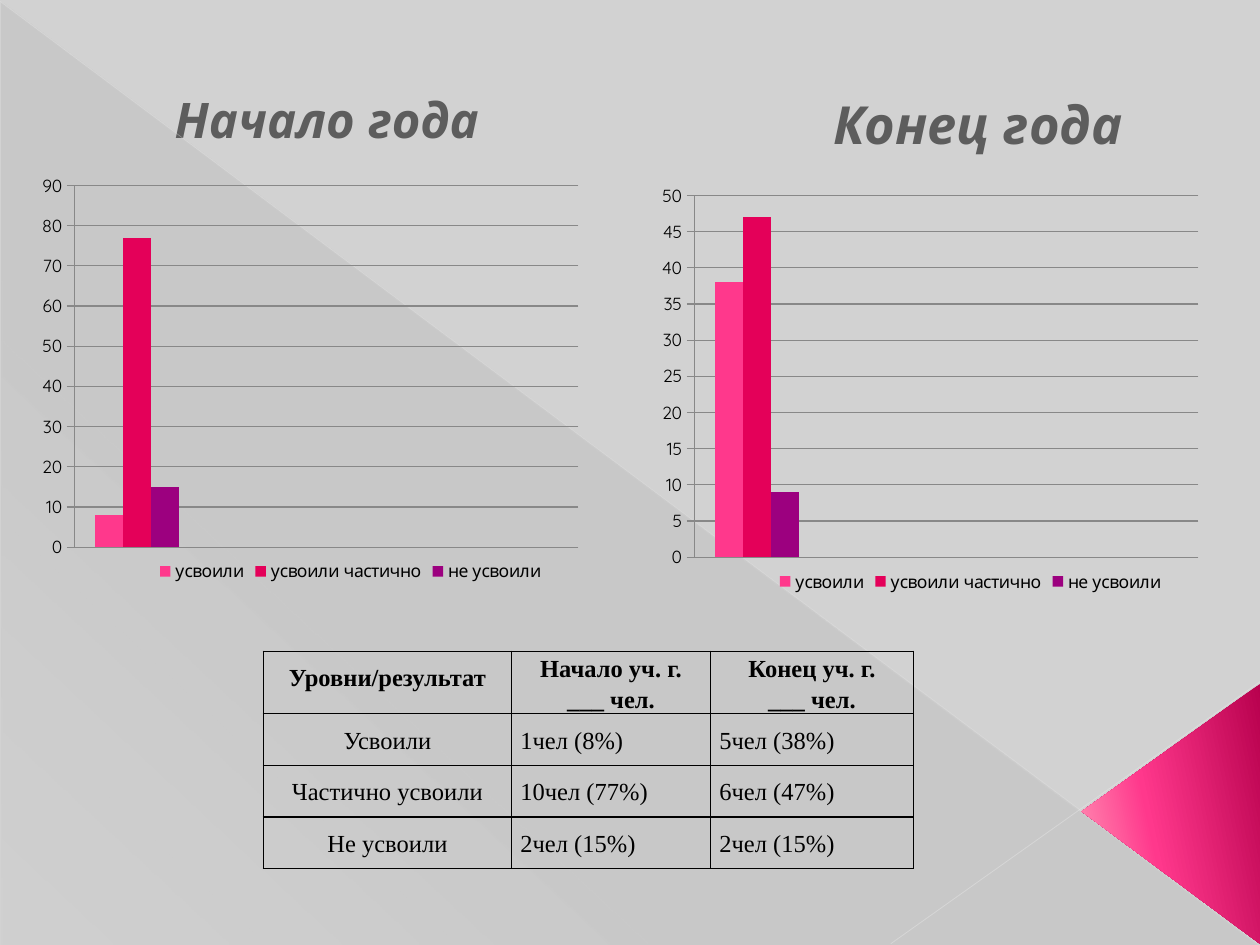
from lxml import etree
from pptx import Presentation
from pptx.chart.data import CategoryChartData
from pptx.dml.color import RGBColor
from pptx.enum.chart import XL_CHART_TYPE as ChartType, XL_LEGEND_POSITION as LegendPos, XL_TICK_MARK as Tick
from pptx.enum.shapes import MSO_CONNECTOR as Connector, MSO_SHAPE as Shape
from pptx.enum.text import MSO_ANCHOR as Anchor, PP_ALIGN as Align
from pptx.oxml import parse_xml
from pptx.oxml.ns import nsdecls, qn
from pptx.util import Inches, Pt

COLORS = {"background": "D2D2D2", "heading": "5D5D5D", "text": "000000", "grid": "888888",
          "shade": "666666", "rule": "E8E8E8", "dark pink": "B8014E",
          "pink": "FF388C", "light pink": "FF9CB9", "red": "E40059", "purple": "9C007F"}
RGB = {name: RGBColor.from_string(value) for name, value in COLORS.items()}


def set_gradient(shape, stops, angle):
    """Fill with (position %, colour name, opacity %) stops and no outline."""
    shape.shadow.inherit = False
    shape.line.fill.background()
    shape.fill.background()
    marks = "".join(
        f'<a:gs pos="{pos * 1000}"><a:srgbClr val="{COLORS[name]}">'
        f'<a:alpha val="{opacity * 1000}"/></a:srgbClr></a:gs>' for pos, name, opacity in stops)
    gradient = parse_xml(
        f'<a:gradFill rotWithShape="1" {nsdecls("a")}><a:gsLst>{marks}</a:gsLst>'
        f'<a:lin ang="{angle * 60000}" scaled="0"/></a:gradFill>')
    properties = shape.fill._xPr
    properties.replace(properties.find(qn("a:noFill")), gradient)


def manual_layout(**values):
    items = "".join(f'<c:{key} val="{value}"/>' for key, value in values.items())
    return parse_xml(f'<c:layout {nsdecls("c")}><c:manualLayout>{items}</c:manualLayout></c:layout>')


deck = Presentation()
deck.slide_width, deck.slide_height = Inches(10), Inches(7.5)
page = deck.slides.add_slide(deck.slide_layouts[0])
page.background.fill.solid()
page.background.fill.fore_color.rgb = RGB["background"]

# Background triangle and rules
shade = page.shapes.add_shape(Shape.RIGHT_TRIANGLE, Inches(0.01), Inches(0.02), Inches(9.98), Inches(7.48))
set_gradient(shade, [(0, "shade", 10), (70, "shade", 8), (100, "shade", 1)], 133)

for x1, y1, x2, y2, width, opacity in [(0, 0.01, 9.99, 7.49, 0.39, 35), (10, 5.41, 7.07, 7.49, 0.47, 45)]:
    rule = page.shapes.add_connector(Connector.STRAIGHT, Inches(x1), Inches(y1), Inches(x2), Inches(y2))
    rule.line.width = Pt(width)
    rule.line.color.rgb = RGB["rule"]
    color = rule.line._ln.find(".//" + qn("a:srgbClr"))
    etree.SubElement(color, qn("a:alpha")).set("val", str(opacity * 1000))
    etree.SubElement(rule._element.spPr, qn("a:effectLst"))

# Pink corner
corner = page.shapes.add_shape(Shape.ISOSCELES_TRIANGLE, Inches(8.26), Inches(5.75), Inches(2.07), Inches(1.42))
corner.adjustments[0] = 0.51
corner.rotation = 270
set_gradient(corner, [(0, "dark pink", 100), (60, "pink", 100), (100, "light pink", 100)], 258)

# Headings
for box, text, place, size, anchor in [
        (page.shapes.title, "Начало года", (0.59, 0.68, 3.31, 0.55), 28, Anchor.BOTTOM),
        (page.placeholders[1], "Конец года", (5.39, 0.68, 3.62, 0.6), 30, Anchor.TOP)]:
    box.left, box.top, box.width, box.height = map(Inches, place)
    box.text_frame.text = text
    box.text_frame.vertical_anchor = anchor
    para = box.text_frame.paragraphs[0]
    para.alignment = Align.RIGHT
    para.space_before = Pt(0)
    span = para.runs[0]
    for name, value in {"name": "Quicksand", "size": Pt(size), "bold": True, "italic": True}.items():
        setattr(span.font, name, value)
    span.font.color.rgb = RGB["heading"]

# Charts: one filled category out of four
SERIES = [("усвоили", "pink"), ("усвоили частично", "red"), ("не усвоили", "purple")]
for left, top, values, maximum, step in [(0.2, 1.23, (8, 77, 15), 90, 10), (5.12, 1.31, (38, 47, 9), 50, 5)]:
    data = CategoryChartData()
    data.categories = ["1", "", "", ""]
    for (name, _), value in zip(SERIES, values):
        data.add_series(name, (value, None, None, None))
    chart = page.shapes.add_chart(ChartType.COLUMN_CLUSTERED, Inches(left), Inches(top),
                                  Inches(4.88), Inches(3.46), data).chart
    chart.has_title = False
    chart.font.name, chart.font.size = "Quicksand", Pt(10)
    chart.font.color.rgb = RGB["text"]
    plot = chart.plots[0]
    plot.gap_width, plot.overlap, plot.vary_by_categories = 150, 0, False
    for series, (_, color) in zip(plot.series, SERIES):
        series.format.fill.solid()
        series.format.fill.fore_color.rgb = RGB[color]

    chart.category_axis.visible = False
    axis = chart.value_axis
    for name, value in {"minimum_scale": 0, "maximum_scale": maximum, "major_unit": step,
                        "major_tick_mark": Tick.CROSS, "has_major_gridlines": True}.items():
        setattr(axis, name, value)
    for line in (axis.format.line, axis.major_gridlines.format.line):
        line.width = Pt(0.75)
        line.color.rgb = RGB["grid"]

    chart.has_legend = True
    legend = chart.legend
    legend.position, legend.include_in_layout = LegendPos.BOTTOM, True
    for old in legend._element.findall(qn("c:layout")):
        legend._element.remove(old)
    legend._element.find(qn("c:legendPos")).addnext(
        manual_layout(xMode="edge", yMode="edge", x=0.21, y=0.92))
    area = chart._chartSpace.chart.plotArea
    for old in area.findall(qn("c:layout")):
        area.remove(old)
    area.insert(0, manual_layout(layoutTarget="inner", xMode="edge", yMode="edge",
                                 x=0.08, y=0.07, w=0.82, h=0.83))

# Results table
ROWS = [("Уровни/результат", "Начало уч. г.\n___ чел.", "Конец уч. г.\n___ чел."),
        ("Усвоили", "1чел (8%)", "5чел (38%)"),
        ("Частично усвоили", "10чел (77%)", "6чел (47%)"),
        ("Не усвоили", "2чел (15%)", "2чел (15%)")]
table = page.shapes.add_table(4, 3, Inches(2.09), Inches(5.17), Inches(5.16), Inches(1.64)).table
table.first_row = table.horz_banding = False
for column, width in zip(table.columns, (1.97, 1.58, 1.61)):
    column.width = Inches(width)
for i, texts in enumerate(ROWS):
    table.rows[i].height = Inches(0.41)
    for j, text in enumerate(texts):
        cell = table.cell(i, j)
        cell.text = text
        cell.fill.background()
        for name, value in {"margin_left": 0.07, "margin_right": 0.07, "margin_top": 0, "margin_bottom": 0}.items():
            setattr(cell, name, Inches(value))
        for para in cell.text_frame.paragraphs:
            para.alignment = Align.CENTER if i == 0 or j == 0 else Align.LEFT
            para.line_spacing = 1.15 if i == 0 and j > 0 else 1.5
            font = para.runs[0].font
            font.name, font.size, font.bold = "Times New Roman", Pt(14), i == 0
            font.color.rgb = RGB["text"]
        for k, side in enumerate(("lnL", "lnR", "lnT", "lnB")):
            cell._tc.tcPr.insert(k, parse_xml(
                f'<a:{side} w="12700" {nsdecls("a")}><a:solidFill>'
                f'<a:srgbClr val="{COLORS["text"]}"/></a:solidFill></a:{side}>'))

deck.save("out.pptx")
